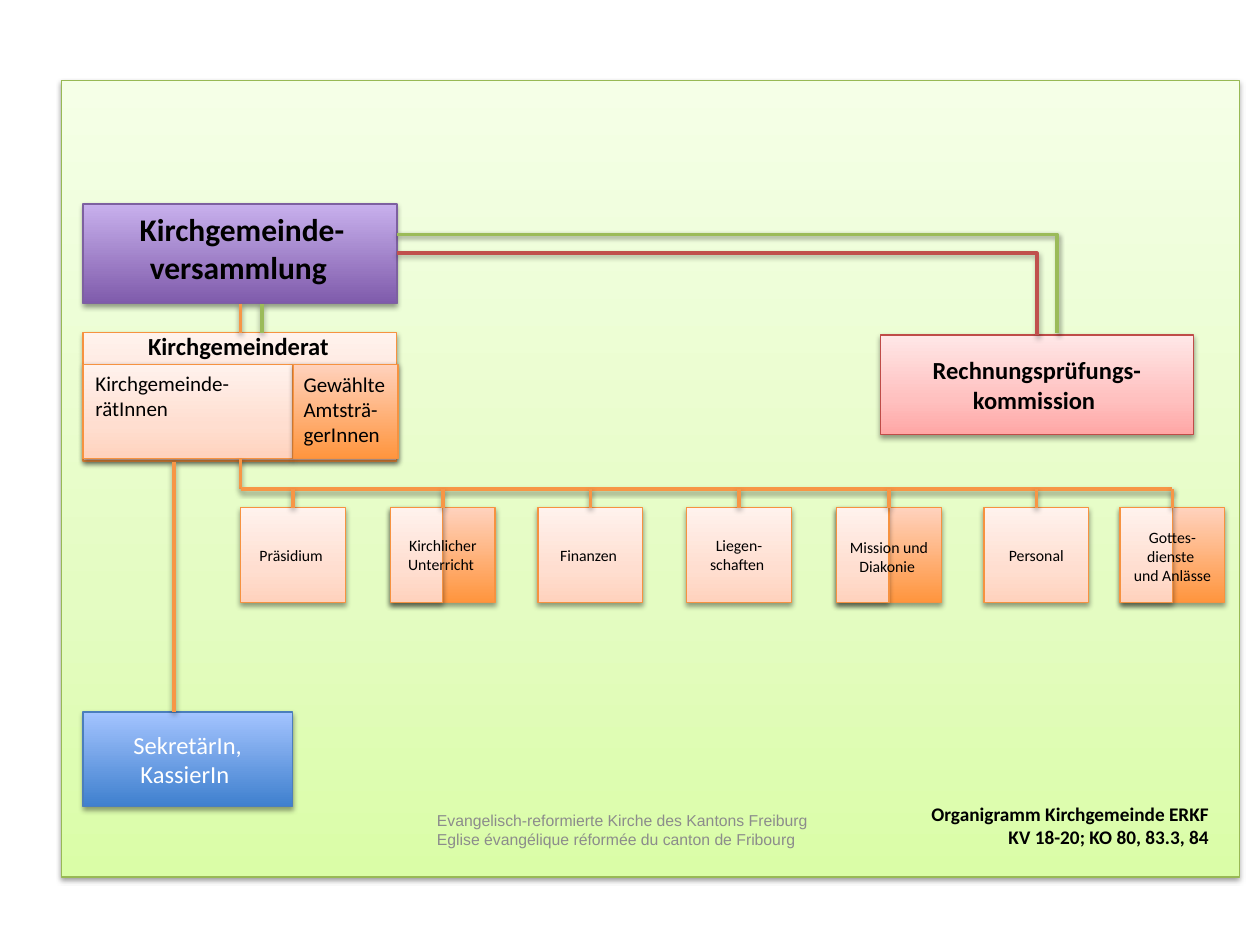
from dataclasses import dataclass
from lxml.etree import SubElement as Sub
from pptx import Presentation
from pptx.dml.color import RGBColor as RGB
from pptx.enum.shapes import MSO_CONNECTOR as LINK, MSO_SHAPE as FORM
from pptx.enum.text import MSO_ANCHOR as ANCHOR, MSO_AUTO_SIZE as SIZE, PP_ALIGN as ALIGN
from pptx.oxml.ns import qn
from pptx.util import Inches, Pt

BLACK = RGB(0x00, 0x00, 0x00)
WHITE = RGB(0xFF, 0xFF, 0xFF)
GREY = RGB(0x8C, 0x8C, 0x8C)
ORANGE = RGB(0xF7, 0x96, 0x46)
RED = RGB(0xC0, 0x50, 0x4D)
GREEN = RGB(0x9B, 0xBB, 0x59)


@dataclass(frozen=True)
class Look:
    """Edge colour, and gradient stops from bottom to top."""
    edge: RGB
    stops: tuple[tuple[int, str], ...]


@dataclass(frozen=True)
class Unit:
    """A department box; a split one is half filled in a darker orange."""
    left: float
    top: float  # top of the label
    text: str
    split: bool = False


LIME = Look(RGB(0x98, 0xB9, 0x55), ((0, "DAFDA7"), (35, "E4FCC2"), (100, "F5FFE7")))
PEACH = Look(RGB(0xF6, 0x92, 0x40), ((0, "FFD2BD"), (35, "FFDED0"), (100, "FFF2ED")))
DEEP = Look(RGB(0xF6, 0x92, 0x40), ((0, "FF953E"), (100, "FFD2BD")))
PURPLE = Look(RGB(0x7D, 0x60, 0xA0), ((0, "7F5BAB"), (100, "C8B0ED")))
BLUE = Look(RGB(0x4B, 0x7E, 0xBC), ((0, "3F80CE"), (100, "A4C4FF")))
ROSE = Look(RGB(0xBF, 0x4C, 0x48), ((0, "FFA6A5"), (35, "FFC0BF"), (100, "FFE7E7")))

UNITS = (
    Unit(1.91, 4.28, "Präsidium "),
    Unit(3.1, 4.2, "Kirchlicher Unterricht ", True),
    Unit(4.27, 4.28, "Finanzen "),
    Unit(5.45, 4.2, "Liegen-schaften "),
    Unit(6.64, 4.22, "Mission und Diakonie ", True),
    Unit(7.81, 4.28, "Personal"),
    Unit(8.89, 4.14, "Gottes-dienste \vund Anlässe ", True),
)
UNIT_W, UNIT_H, UNIT_Y, BUS_Y = 0.83, 0.75, 4.03, 3.88
HALF = UNIT_W / 2

deck = Presentation()
deck.slide_width, deck.slide_height = Inches(10), Inches(7.5)
slide = deck.slides.add_slide(deck.slide_layouts[6])
parts = slide.shapes


def shade(holder) -> None:
    """Add a soft shadow that falls straight down."""
    cast = Sub(holder, qn("a:outerShdw"), blurRad=str(Pt(3.1)), dist=str(Pt(1.6)),
               dir="5400000", rotWithShape="0")
    tone = Sub(cast, qn("a:srgbClr"), val="000000")
    Sub(tone, qn("a:alpha"), val="38000")


def box(x: float, y: float, w: float, h: float, look: Look,
        form: FORM = FORM.FLOWCHART_PROCESS):
    item = parts.add_shape(form, *map(Inches, (x, y, w, h)))
    item.fill.gradient()
    item.fill.gradient_angle = 90
    stops = item._element.spPr.find(".//" + qn("a:gsLst"))
    for old in list(stops):
        stops.remove(old)
    for spot, tone in look.stops:
        stop = Sub(stops, qn("a:gs"), pos=str(spot * 1000))
        Sub(stop, qn("a:srgbClr"), val=tone)
    item.line.color.rgb = look.edge
    item.line.width = Pt(0.75)
    item.shadow.inherit = False
    shade(item._element.spPr.find(qn("a:effectLst")))
    return item


def write(item, text: str, size: int, align: ALIGN = ALIGN.CENTER, color: RGB = BLACK,
          bold: bool = False, face: str = "Calibri", **frame) -> None:
    body = item.text_frame
    body.text = text
    for key, value in {"word_wrap": True, **frame}.items():
        setattr(body, key, value)
    style = {"size": Pt(size), "name": face, "bold": bold}
    for para in body.paragraphs:
        para.alignment = align
        for run in para.runs:
            for key, value in style.items():
                setattr(run.font, key, value)
            run.font.color.rgb = color


def label(x: float, y: float, w: float, h: float, text: str, size: int, **style) -> None:
    item = parts.add_textbox(*map(Inches, (x, y, w, h)))
    write(item, text, size, **{"auto_size": SIZE.SHAPE_TO_FIT_TEXT, **style})


def link(x1: float, y1: float, x2: float, y2: float, color: RGB = ORANGE,
         bent: bool = False) -> None:
    kind = LINK.ELBOW if bent else LINK.STRAIGHT
    item = parts.add_connector(kind, *map(Inches, (x1, y1, x2, y2)))
    item.line.color.rgb = color
    item.line.width = Pt(2)
    props = item._element.spPr
    if bent:  # a single corner: across, then down
        props.find(qn("a:prstGeom")).set("prst", "bentConnector2")
    shade(Sub(props, qn("a:effectLst")))


# Background panel
box(0.49, 0.64, 9.35, 6.32, LIME, FORM.RECTANGLE)

# Council, assembly and office
box(0.66, 2.64, 2.49, 1.02, PEACH, FORM.RECTANGLE)
box(0.66, 1.62, 2.49, 0.79, PURPLE)
box(0.66, 2.89, 1.66, 0.75, PEACH)
office = box(0.66, 5.65, 1.66, 0.75, BLUE)
write(office, "SekretärIn, KassierIn ", 14, color=WHITE, vertical_anchor=ANCHOR.MIDDLE)
box(2.33, 2.89, UNIT_W, UNIT_H, DEEP)
label(0.66, 2.89, 1.66, 0.5, "Kirchgemeinde-rätInnen", 12, align=ALIGN.LEFT)
label(2.33, 2.9, 0.83, 0.71, "Gewählte Amtsträ-gerInnen", 12, align=ALIGN.LEFT,
      margin_left=Inches(0.08), margin_right=Inches(0.08))
label(0.73, 2.58, 2.37, 0.34, "Kirchgemeinderat ", 14, bold=True)
label(0.68, 1.62, 2.48, 0.71, "Kirchgemeinde-versammlung ", 18, bold=True)

# Departments
for unit in UNITS:
    box(unit.left, UNIT_Y, UNIT_W, UNIT_H, DEEP if unit.split else PEACH)
    if unit.split:
        box(unit.left, UNIT_Y, HALF, UNIT_H, PEACH)
    mid = UNIT_Y + UNIT_H / 2
    label(unit.left, unit.top, UNIT_W, 2 * (mid - unit.top), unit.text, 9)

# Orange lines
link(1.91, 2.41, 1.91, 2.64)
link(1.91, 3.64, 1.91, BUS_Y)
link(1.91, BUS_Y, UNITS[-1].left + HALF, BUS_Y)
for unit in UNITS:
    link(unit.left + HALF, BUS_Y, unit.left + HALF, UNIT_Y)
link(1.38, 3.67, 1.38, 5.65)

# Audit board and its lines
box(6.99, 2.66, 2.48, 0.79, ROSE, FORM.RECTANGLE)
label(7.16, 2.77, 2.14, 0.57, "Rechnungsprüfungs-kommission ", 14, bold=True)
link(3.15, 2.01, 8.23, 2.66, RED, bent=True)
link(3.15, 1.86, 8.39, 2.64, GREEN, bent=True)
link(2.08, 2.64, 2.08, 2.41, GREEN)

# Title and footer
label(7.06, 6.32, 2.67, 0.47,
      "Organigramm Kirchgemeinde ERKF \nKV 18-20; KO 80, 83.3, 84 ",
      11, align=ALIGN.RIGHT, bold=True)
label(3.37, 6.4, 4.17, 0.37,
      "Evangelisch-reformierte Kirche des Kantons Freiburg\n"
      "Eglise évangélique réformée du canton de Fribourg",
      9, align=ALIGN.LEFT, color=GREY, face="Arial",
      auto_size=SIZE.NONE, vertical_anchor=ANCHOR.MIDDLE)

deck.save("out.pptx")
